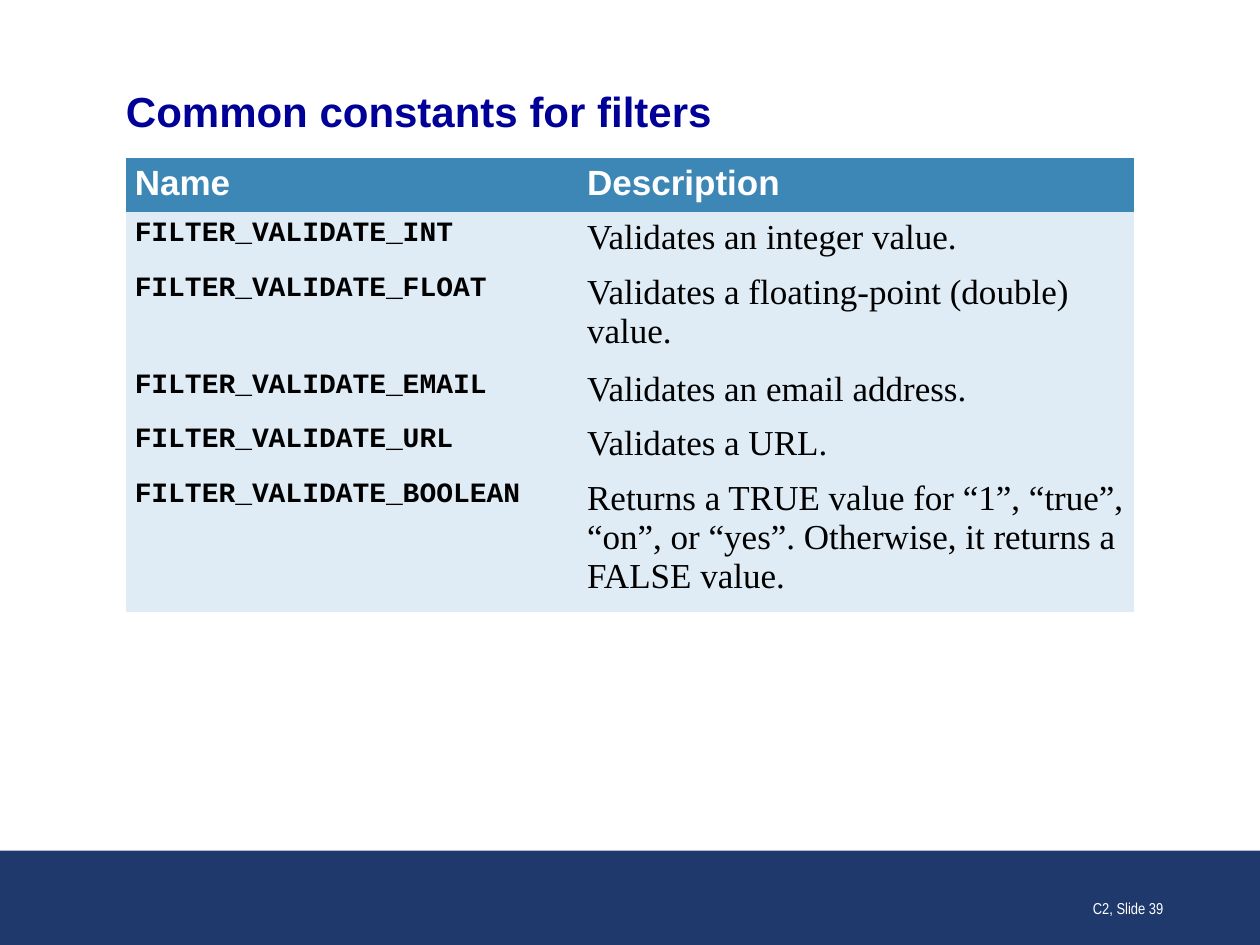
"""Build the slide listing common constants for filters."""
from pptx import Presentation
from pptx.dml.color import RGBColor
from pptx.enum.shapes import MSO_SHAPE
from pptx.enum.text import MSO_ANCHOR, PP_ALIGN
from pptx.oxml.ns import qn
from pptx.util import Inches, Pt

RECTANGLE = MSO_SHAPE.RECTANGLE
MIDDLE, BOTTOM = MSO_ANCHOR.MIDDLE, MSO_ANCHOR.BOTTOM
RIGHT = PP_ALIGN.RIGHT
NO_GRID_STYLE = "{2D5ABB26-0587-4C30-8999-92F81FD0307C}"
COLORS = {
    "title": "000099",
    "header": "3D87B7",
    "body": "DFECF5",
    "footer": "20396D",
    "black": "000000",
    "white": "FFFFFF",
}
COLUMN_WIDTHS = [3.59, 4.41]
ROW_HEIGHTS = [0.43, 0.43, 0.76, 0.43, 0.43, 1.09]
ROWS = [
    ("Name", "Description"),
    ("FILTER_VALIDATE_INT", "Validates an integer value."),
    ("FILTER_VALIDATE_FLOAT", "Validates a floating-point (double) value."),
    ("FILTER_VALIDATE_EMAIL", "Validates an email address."),
    ("FILTER_VALIDATE_URL", "Validates a URL."),
    ("FILTER_VALIDATE_BOOLEAN",
     "Returns a TRUE value for “1”, “true”, “on”, or “yes”. "
     "Otherwise, it returns a FALSE value."),
]
HEADER_FONT = ("Arial", 20, True, "white")
BODY_FONTS = [("Courier New", 16, True, "black"),
              ("Times New Roman", 20, False, "black")]


def write(text_frame, text, name, size, bold, color):
    text_frame.word_wrap = True
    text_frame.text = text
    paragraph = text_frame.paragraphs[0]
    font = paragraph.runs[0].font
    font.name, font.size, font.bold = name, Pt(size), bold
    font.color.rgb = RGBColor.from_string(COLORS[color])
    return paragraph


presentation = Presentation()
presentation.slide_width = Inches(10)
presentation.slide_height = Inches(7.5)
slide = presentation.slides.add_slide(presentation.slide_layouts[6])

footer_bar = slide.shapes.add_shape(
    RECTANGLE, Inches(0), Inches(6.75), Inches(10), Inches(0.75))
footer_bar.shadow.inherit = False
footer_bar.fill.solid()
footer_bar.fill.fore_color.rgb = RGBColor.from_string(COLORS["footer"])
footer_bar.line.fill.background()

title_frame = slide.shapes.add_textbox(
    Inches(1), Inches(0.68), Inches(8), Inches(0.4)).text_frame
title_frame.margin_left = title_frame.margin_right = 0
title_frame.margin_top = title_frame.margin_bottom = 0
title_frame.vertical_anchor = MIDDLE
write(title_frame, "Common constants for filters", "Arial", 24, True, "title")

table = slide.shapes.add_table(
    len(ROWS), len(COLUMN_WIDTHS), Inches(1), Inches(1.25),
    Inches(sum(COLUMN_WIDTHS)), Inches(sum(ROW_HEIGHTS))).table
table.horz_banding = False
table._tbl.tblPr.find(qn("a:tableStyleId")).text = NO_GRID_STYLE
for column, width in zip(table.columns, COLUMN_WIDTHS):
    column.width = Inches(width)
for row_index, (texts, height) in enumerate(zip(ROWS, ROW_HEIGHTS)):
    table.rows[row_index].height = Inches(height)
    fill_color = "body" if row_index else "header"
    for column_index, text in enumerate(texts):
        cell = table.cell(row_index, column_index)
        cell.margin_left = cell.margin_right = Inches(0.07)
        cell.margin_top = cell.margin_bottom = Inches(0.05)
        cell.fill.solid()
        cell.fill.fore_color.rgb = RGBColor.from_string(COLORS[fill_color])
        style = BODY_FONTS[column_index] if row_index else HEADER_FONT
        write(cell.text_frame, text, *style)

number_frame = slide.shapes.add_textbox(
    Inches(7.25), Inches(6.83), Inches(2.08), Inches(0.5)).text_frame
number_frame.vertical_anchor = BOTTOM
number = write(number_frame, "C2, Slide 39", "Arial Narrow", 9, False, "white")
number.alignment = RIGHT

presentation.save("out.pptx")
